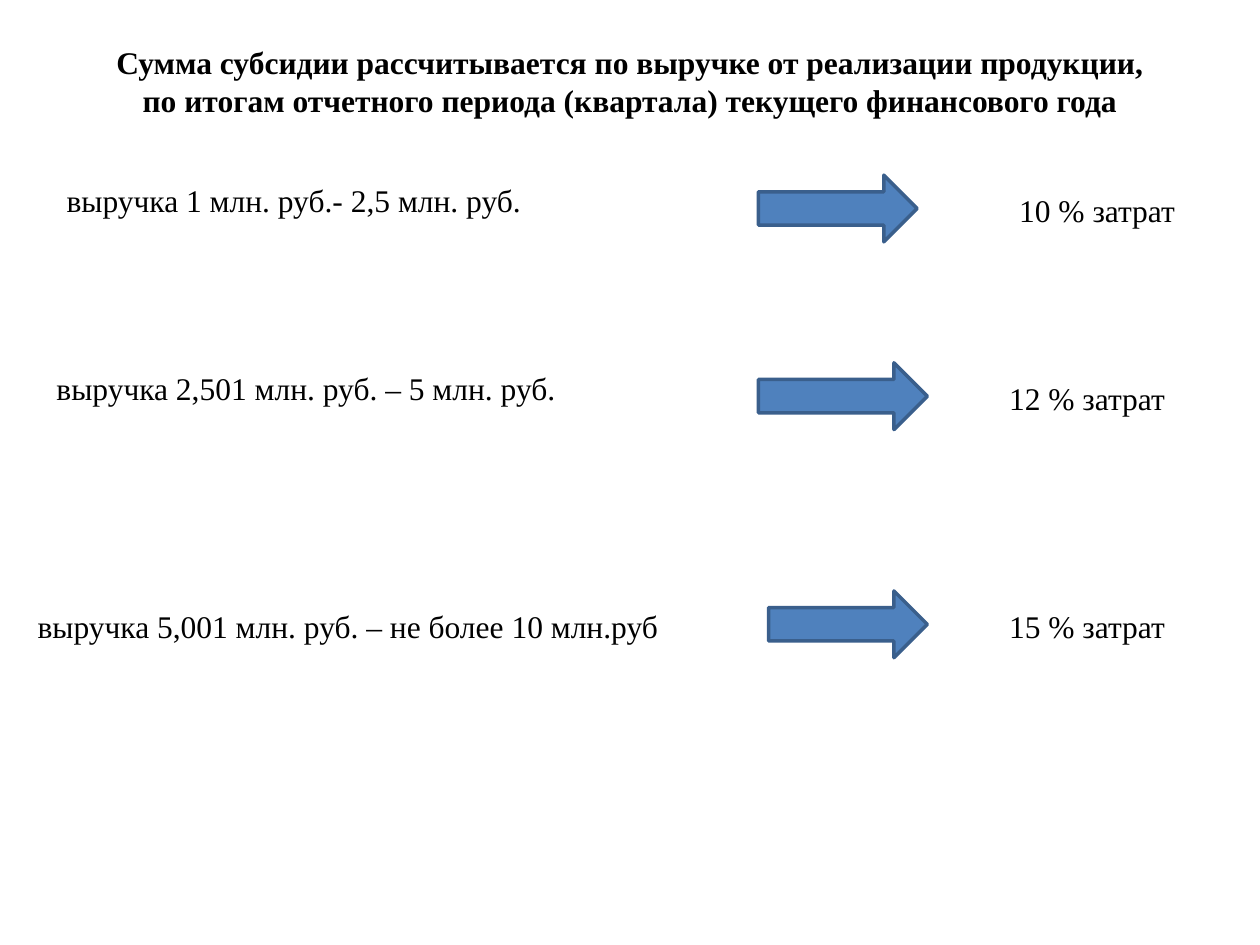
from pptx import Presentation
from pptx.dml.color import RGBColor
from pptx.enum.shapes import MSO_SHAPE
from pptx.enum.text import MSO_ANCHOR, MSO_AUTO_SIZE, PP_ALIGN
from pptx.util import Inches, Pt

BLACK = RGBColor(0x00, 0x00, 0x00)
BLUE = RGBColor(0x4F, 0x81, 0xBD)
DARK_BLUE = RGBColor(0x3A, 0x5F, 0x8C)
FONT = "Times New Roman"

HEADING = ("Сумма субсидии рассчитывается по выручке от реализации продукции, "
           "по итогам отчетного периода (квартала) текущего финансового года")

# Each part of a tier: its content, then left, top and width in inches
TIERS = [
    {"revenue": ("выручка 1 млн. руб.- 2,5 млн. руб.", 0.43, 1.39, 4.02),
     "arrow": (6.02, 1.39, 1.26),
     "share": ("10 % затрат", 7.99, 1.47, 1.57)},
    {"revenue": ("выручка 2,501 млн. руб. – 5 млн. руб.", 0.35, 2.88, 4.17),
     "arrow": (6.02, 2.88, 1.34),
     "share": ("12 % затрат", 7.91, 2.96, 1.45)},
    {"revenue": ("выручка 5,001 млн. руб. – не более 10 млн.руб", 0.2, 4.77, 5.64),
     "arrow": (6.1, 4.69, 1.26),
     "share": ("15 % затрат", 7.91, 4.77, 1.59)},
]
LABEL_HEIGHT = 0.4
ARROW_HEIGHT = 0.53


def write(frame, text, bold=False, align=PP_ALIGN.LEFT, wrap=True):
    frame.word_wrap = wrap
    frame.auto_size = MSO_AUTO_SIZE.SHAPE_TO_FIT_TEXT
    frame.vertical_anchor = MSO_ANCHOR.TOP
    paragraph = frame.paragraphs[0]
    paragraph.alignment = align
    run = paragraph.add_run()
    run.text = text
    run.font.name = FONT
    run.font.size = Pt(18)
    run.font.bold = bold
    run.font.color.rgb = BLACK


def add_heading(slide):
    heading = slide.shapes.title
    heading.left, heading.top = Inches(0.75), Inches(0.29)
    heading.width, heading.height = Inches(8.5), Inches(0.71)
    write(heading.text_frame, HEADING, bold=True, align=PP_ALIGN.CENTER)


def add_label(slide, text, left, top, width, wrap=True):
    label = slide.shapes.add_textbox(
        Inches(left), Inches(top), Inches(width), Inches(LABEL_HEIGHT))
    write(label.text_frame, text, wrap=wrap)


def add_arrow(slide, left, top, width):
    arrow = slide.shapes.add_shape(
        MSO_SHAPE.RIGHT_ARROW,
        Inches(left), Inches(top), Inches(width), Inches(ARROW_HEIGHT))
    arrow.shadow.inherit = False
    arrow.fill.solid()
    arrow.fill.fore_color.rgb = BLUE
    arrow.line.color.rgb = DARK_BLUE
    arrow.line.width = Pt(2)


def main():
    deck = Presentation()
    deck.slide_width, deck.slide_height = Inches(10), Inches(7.5)
    slide = deck.slides.add_slide(deck.slide_layouts.get_by_name("Title Only"))
    add_heading(slide)
    for tier in TIERS:
        add_label(slide, *tier["revenue"])
        add_label(slide, *tier["share"], wrap=False)
    for tier in TIERS:
        add_arrow(slide, *tier["arrow"])
    deck.save("out.pptx")


if __name__ == "__main__":
    main()
